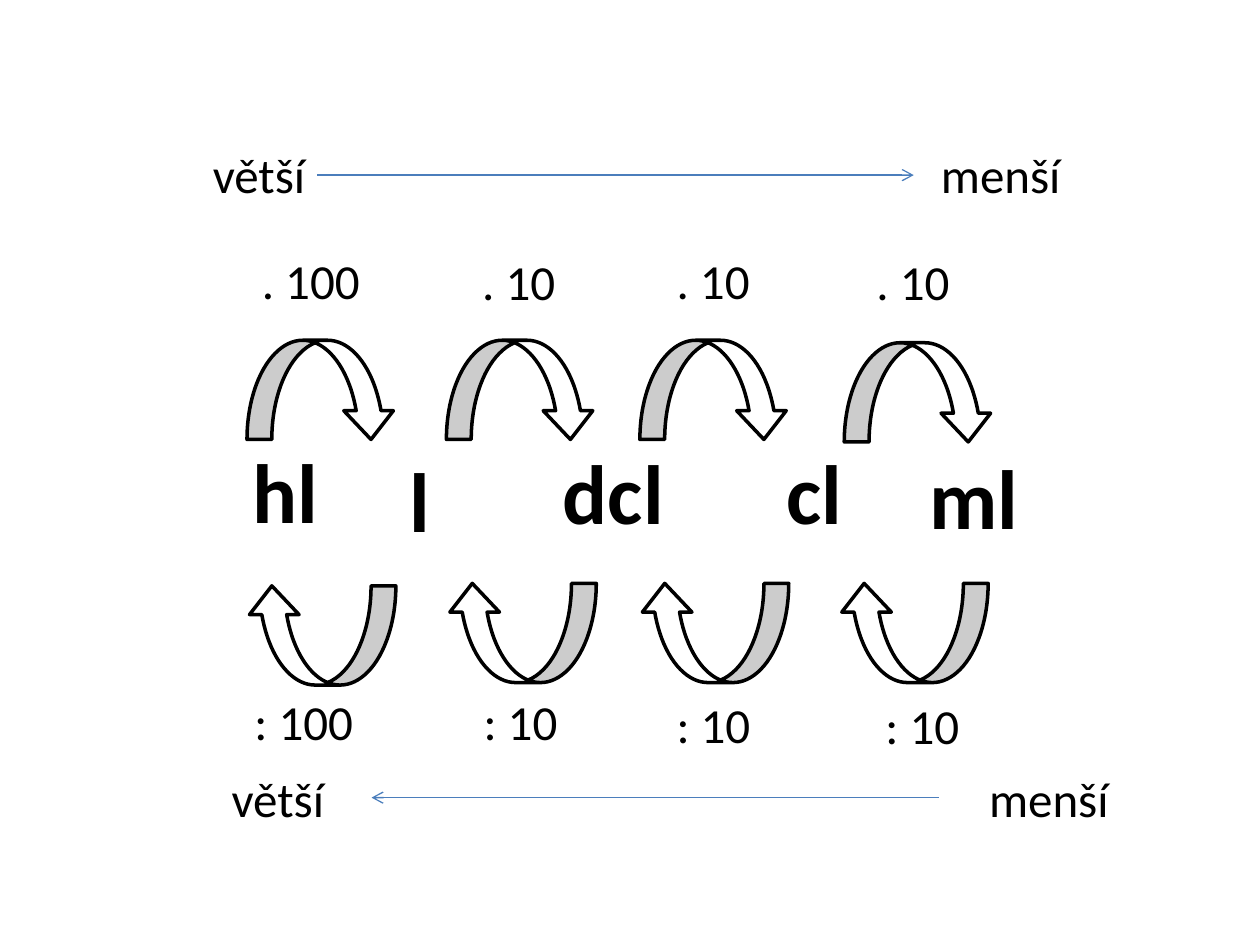
from lxml import etree
from pptx import Presentation
from pptx import util as u
from pptx.dml.color import RGBColor
from pptx.enum import shapes, text
from pptx.oxml import ns

BLACK = RGBColor(0x00, 0x00, 0x00)
WHITE = RGBColor(0xFF, 0xFF, 0xFF)
BLUE = RGBColor(0x4B, 0x7E, 0xBC)

deck = Presentation()
deck.slide_width, deck.slide_height = u.Cm(25.4), u.Cm(19.05)
slide = deck.slides.add_slide(deck.slide_layouts[6])


def add_label(wording, left, top, width, size=28, bold=False):
    height = 2.31 if size == 48 else 1.45
    label = slide.shapes.add_textbox(u.Cm(left), u.Cm(top), u.Cm(width), u.Cm(height))
    label.text_frame.word_wrap = False
    label.text_frame.auto_size = text.MSO_AUTO_SIZE.SHAPE_TO_FIT_TEXT
    run = label.text_frame.paragraphs[0].add_run()
    run.text = wording
    run.font.name = "Calibri"
    run.font.size = u.Pt(size)
    run.font.bold = bold
    run.font.color.rgb = BLACK


for unit, left, top, width in [
    ("hl", 4.85, 8.74, 1.85),
    ("l", 8, 8.92, 0.94),
    ("dcl", 11.1, 8.76, 2.57),
    ("cl", 15.6, 8.76, 1.65),
    ("ml", 18.49, 8.86, 2.31),
]:
    add_label(unit, left, top, width, size=48, bold=True)

for left, top, rotation in [
    (4.98, 6.86, 0), (9, 6.86, 0), (12.9, 6.86, 0), (17.02, 6.91, 0),
    (4.98, 11.81, 180), (9.02, 11.76, 180), (12.9, 11.76, 180), (16.92, 11.76, 180),
]:
    step = slide.shapes.add_shape(
        shapes.MSO_SHAPE.CURVED_DOWN_ARROW, u.Cm(left), u.Cm(top), u.Cm(3), u.Cm(2))
    for index, share in enumerate((0.25, 0.5, 0.29)):
        step.adjustments[index] = share
    step.rotation = rotation
    step.shadow.inherit = False
    step.fill.solid()
    step.fill.fore_color.rgb = WHITE
    step.line.color.rgb = BLACK
    step.line.width = u.Pt(2)

for factor, left, top, width in [
    (". 100", 5.03, 4.93, 2.51),
    (". 10", 9.47, 4.95, 2.01),
    (". 10", 13.39, 4.93, 2.01),
    (". 10", 17.42, 4.95, 2.01),
    (": 100", 4.88, 13.82, 2.54),
    (": 10", 9.5, 13.82, 2.03),
    (": 10", 13.39, 13.87, 2.03),
    (": 10", 17.6, 13.89, 2.03),
]:
    add_label(factor, left, top, width)

for larger_left, smaller_left, label_top, start, end, line_top in [
    (4.04, 18.72, 2.79, 6.4, 18.42, 3.53),
    (4.42, 19.69, 15.37, 18.92, 7.49, 16.08),
]:
    add_label("větší", larger_left, label_top, 2.39)
    add_label("menší", smaller_left, label_top, 2.95)
    direction = slide.shapes.add_connector(
        shapes.MSO_CONNECTOR.STRAIGHT, u.Cm(start), u.Cm(line_top), u.Cm(end), u.Cm(line_top))
    direction.line.color.rgb = BLUE
    direction.line.width = u.Pt(0.75)
    etree.SubElement(direction.line._get_or_add_ln(), ns.qn("a:tailEnd"), type="arrow")
    etree.SubElement(direction._element.spPr, ns.qn("a:effectLst"))

deck.save("out.pptx")
